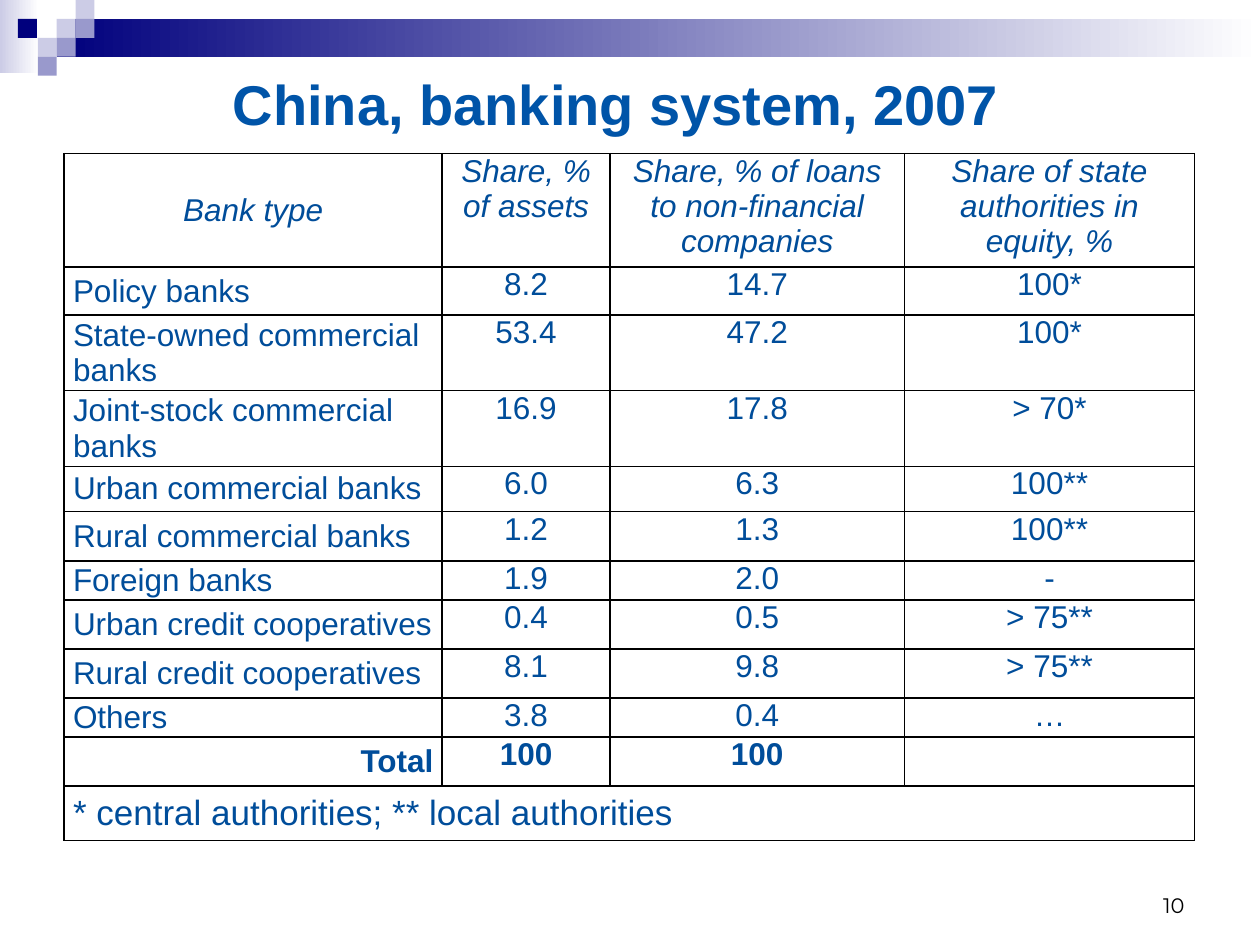
from lxml.etree import SubElement
from pptx import Presentation
from pptx.dml.color import RGBColor
from pptx.enum.shapes import MSO_SHAPE
from pptx.enum.text import MSO_ANCHOR, PP_ALIGN
from pptx.oxml.ns import qn
from pptx.util import Inches, Pt

NAVY = RGBColor(0x00, 0x00, 0x7D)
LAVENDER = RGBColor(0xCC, 0xCC, 0xE6)
VIOLET = RGBColor(0x99, 0x99, 0xCC)
TITLE_BLUE = RGBColor(0x00, 0x54, 0xA8)
TABLE_BLUE = RGBColor(0x00, 0x4D, 0x9A)
BLACK = RGBColor(0x00, 0x00, 0x00)
WHITE = RGBColor(0xFF, 0xFF, 0xFF)

UNIT = 0.15
COLUMN_WIDTHS = [3, 1.33, 2.34, 2.3]
ROW_HEIGHTS = [0.73, 0.38, 0.55, 0.49, 0.36, 0.39, 0.31, 0.39, 0.39, 0.31, 0.39, 0.43]
ROWS = [
    ["Bank type", "Share, % of assets", "Share, % of loans to non-financial companies",
     "Share of state authorities in equity, %"],
    ["Policy banks", "8.2", "14.7", "100*"],
    ["State-owned commercial banks", "53.4", "47.2", "100*"],
    ["Joint-stock commercial banks", "16.9", "17.8", "> 70*"],
    ["Urban commercial banks", "6.0", "6.3", "100**"],
    ["Rural commercial banks", "1.2", "1.3", "100**"],
    ["Foreign banks", "1.9", "2.0", "-"],
    ["Urban credit cooperatives", "0.4", "0.5", "> 75**"],
    ["Rural credit cooperatives", "8.1", "9.8", "> 75**"],
    ["Others", "3.8", "0.4", "…"],
    ["Total", "100", "100", ""],
    ["* central authorities; ** local authorities", "", "", ""],
]
HEADER_ROW, TOTAL_ROW, NOTE_ROW = 0, len(ROWS) - 2, len(ROWS) - 1


def write_text(text_frame, text, size=18, color=TABLE_BLUE, font="Arial",
               align=PP_ALIGN.CENTER, bold=False, italic=False, space_after=0):
    paragraph = text_frame.paragraphs[0]
    paragraph.alignment = align
    paragraph.space_after = Pt(space_after)
    run = paragraph.add_run()
    run.text = text
    run.font.size = Pt(size)
    run.font.name = font
    run.font.bold = bold
    run.font.italic = italic
    run.font.color.rgb = color


def add_block(left, top, width, height, color, fade=False):
    shape = slide.shapes.add_shape(MSO_SHAPE.RECTANGLE, Inches(left), Inches(top),
                                   Inches(width), Inches(height))
    shape.shadow.inherit = False
    shape.line.fill.background()
    if fade:
        shape.fill.gradient()
        shape.fill.gradient_angle = 0
        for stop, stop_color, position in zip(shape.fill.gradient_stops, (color, WHITE), (0, 1)):
            stop.color.rgb = stop_color
            stop.position = position
    else:
        shape.fill.solid()
        shape.fill.fore_color.rgb = color


presentation = Presentation()
presentation.slide_width = Inches(10)
presentation.slide_height = Inches(7.5)
slide = presentation.slides.add_slide(presentation.slide_layouts[5])

add_block(0, 0, 0.31, 0.58, LAVENDER, fade=True)
add_block(3 * UNIT, UNIT, 10 - 3 * UNIT, 2 * UNIT, NAVY, fade=True)
for column, row, color in [(3, 1, LAVENDER), (4, 0, LAVENDER), (4, 1, VIOLET), (2, 2, LAVENDER),
                           (0.95, 1, NAVY), (3, 2, VIOLET), (2, 3, VIOLET)]:
    add_block(column * UNIT, row * UNIT, UNIT, UNIT, color)

title = slide.shapes.title
title.left, title.top, title.width, title.height = Inches(0.39), Inches(0.47), Inches(9), Inches(0.7)
title.text_frame.vertical_anchor = MSO_ANCHOR.MIDDLE
write_text(title.text_frame, "China, banking system, 2007", size=32, color=TITLE_BLUE, bold=True)

page_number = slide.shapes.add_textbox(Inches(7.17), Inches(6.83), Inches(2.33), Inches(0.5))
page_number.text_frame.word_wrap = True
page_number.text_frame.vertical_anchor = MSO_ANCHOR.BOTTOM
write_text(page_number.text_frame, "10", size=12, color=BLACK, font="Montserrat", align=PP_ALIGN.RIGHT)

table = slide.shapes.add_table(len(ROWS), len(COLUMN_WIDTHS), Inches(0.51), Inches(1.22),
                               Inches(sum(COLUMN_WIDTHS)), Inches(sum(ROW_HEIGHTS))).table
table.first_row = False
table.horz_banding = False
for column, width in zip(table.columns, COLUMN_WIDTHS):
    column.width = Inches(width)
for row, height in zip(table.rows, ROW_HEIGHTS):
    row.height = Inches(height)
table.cell(NOTE_ROW, 0).merge(table.cell(NOTE_ROW, len(COLUMN_WIDTHS) - 1))

for row_index, texts in enumerate(ROWS):
    for column_index, text in enumerate(texts):
        cell = table.cell(row_index, column_index)
        cell.margin_left = cell.margin_right = Inches(0.07)
        cell.margin_top = cell.margin_bottom = 0
        cell.vertical_anchor = MSO_ANCHOR.TOP if column_index else MSO_ANCHOR.MIDDLE
        properties = cell._tc.get_or_add_tcPr()
        for side in ("a:lnL", "a:lnR", "a:lnT", "a:lnB"):
            border = SubElement(properties, qn(side), w=str(Pt(1)))
            border_fill = SubElement(border, qn("a:solidFill"))
            SubElement(border_fill, qn("a:srgbClr"), val=str(BLACK))
        cell.fill.background()
        if not text:
            continue
        if column_index or row_index == HEADER_ROW:
            align = PP_ALIGN.CENTER
        else:
            align = PP_ALIGN.RIGHT if row_index == TOTAL_ROW else PP_ALIGN.LEFT
        write_text(cell.text_frame, text, size=20 if row_index == NOTE_ROW else 18, align=align,
                   bold=row_index == TOTAL_ROW, italic=row_index == HEADER_ROW, space_after=10)

presentation.save("out.pptx")
